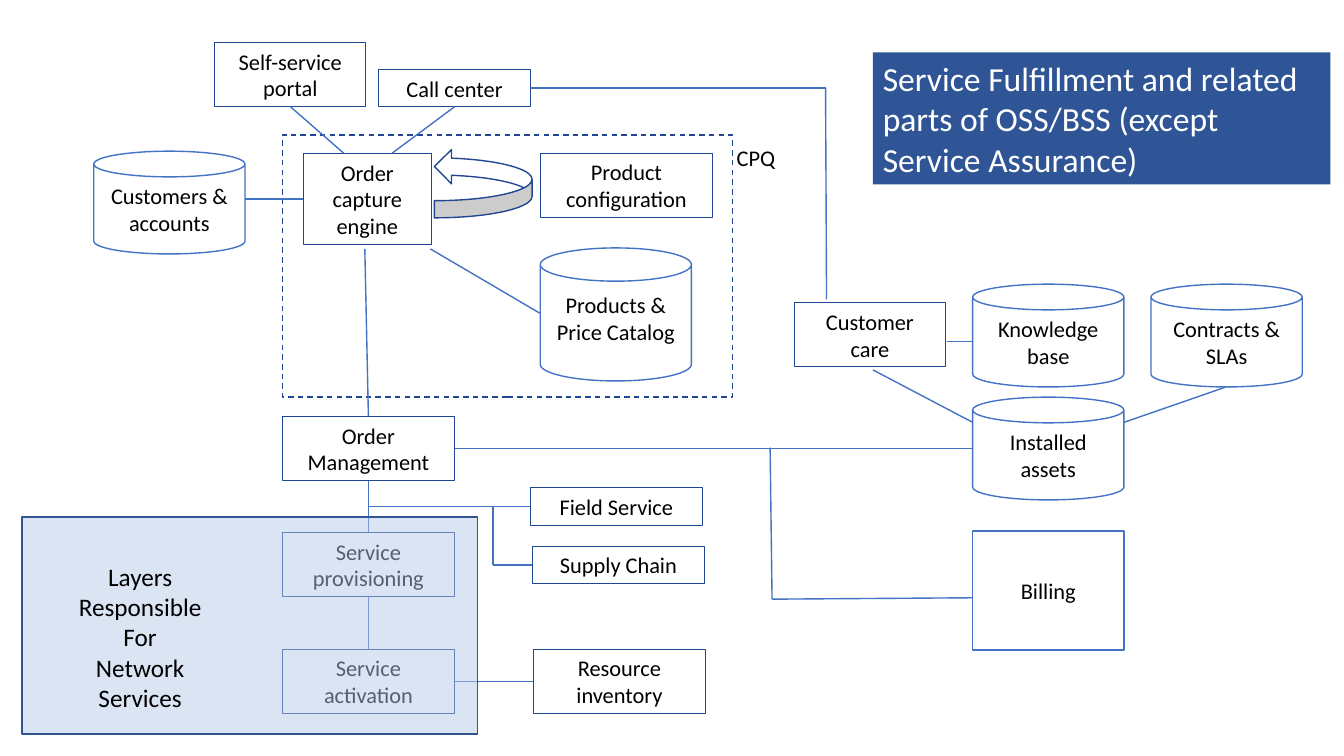
import dataclasses

import lxml.etree
import pptx
import pptx.dml.color
import pptx.enum.dml
import pptx.enum.shapes
import pptx.enum.text
import pptx.oxml.ns
import pptx.util

Pt = pptx.util.Pt
qn = pptx.oxml.ns.qn
Kind = pptx.enum.shapes.MSO_SHAPE
Align = pptx.enum.text.PP_ALIGN
TOP, LEFT, BOTTOM, RIGHT = range(4)


@dataclasses.dataclass(frozen=True)
class Theme:
    font: str = "Calibri"
    body: float = 16
    note: float = 18
    head: float = 24
    ink: str = "000000"
    white: str = "FFFFFF"
    navy: str = "214794"
    blue: str = "4472C4"
    title: str = "2F5597"
    pale: str = "B4C7E7"
    rim: str = "325491"


class Board:
    def __init__(self, slide, theme):
        self.slide = slide
        self.theme = theme

    def tint(self, code):
        return pptx.dml.color.RGBColor.from_string(code)

    def words(self, shape, text, size=None, color=None, align=Align.CENTER):
        frame = shape.text_frame
        frame.word_wrap = True
        for i, part in enumerate(text.split("\n")):
            para = frame.paragraphs[0] if i == 0 else frame.add_paragraph()
            para.alignment = align
            run = para.add_run()
            run.text = part
            run.font.name = self.theme.font
            run.font.size = Pt(size or self.theme.body)
            run.font.color.rgb = self.tint(color or self.theme.ink)

    def shape(self, kind, spot, fill=None, line=None, width=1):
        shape = self.slide.shapes.add_shape(kind, *map(Pt, spot))
        shape.shadow.inherit = False
        if fill:
            shape.fill.solid()
            shape.fill.fore_color.rgb = self.tint(fill)
        else:
            shape.fill.background()
        if line:
            shape.line.color.rgb = self.tint(line)
            shape.line.width = Pt(width)
        else:
            shape.line.fill.background()
        return shape

    def box(self, text, x, y, w, h, line=None, width=0.75):
        shape = self.shape(Kind.RECTANGLE, (x, y, w, h), None, line or self.theme.navy, width)
        self.words(shape, text)
        return shape

    def store(self, text, x, y, h=73.4, low=3.6):
        shape = self.shape(Kind.CAN, (x, y, 108, h), None, self.theme.blue)
        self.words(shape, text)
        shape.text_frame.margin_bottom = Pt(low)
        return shape

    def label(self, text, spot, size=None, align=Align.CENTER):
        self.words(self.slide.shapes.add_textbox(*map(Pt, spot)), text, size, None, align)

    def frame(self, spot):
        shape = self.shape(Kind.RECTANGLE, spot, None, self.theme.navy)
        shape.line.dash_style = pptx.enum.dml.MSO_LINE.DASH

    def loop(self, spot):
        shape = self.shape(Kind.CURVED_LEFT_ARROW, spot, self.theme.white, self.theme.navy)
        shape._element.spPr.find(qn("a:xfrm")).set("flipV", "1")

    def band(self, spot, alpha):
        shape = self.shape(Kind.RECTANGLE, spot, self.theme.pale, self.theme.rim)
        color = shape._element.spPr.find(qn("a:solidFill")).find(qn("a:srgbClr"))
        lxml.etree.SubElement(color, qn("a:alpha")).set("val", str(alpha * 1000))

    def title(self, text, spot):
        shape = self.shape(Kind.RECTANGLE, spot, self.theme.title)
        self.words(shape, text, self.theme.head, self.theme.white, Align.LEFT)

    def link(self, start, end):
        straight = pptx.enum.shapes.MSO_CONNECTOR.STRAIGHT
        spots = [(0, 0) if hasattr(p[0], "shape_id") else p for p in (start, end)]
        wire = self.slide.shapes.add_connector(straight, *(Pt(v) for p in spots for v in p))
        for point, join in ((start, wire.begin_connect), (end, wire.end_connect)):
            if hasattr(point[0], "shape_id"):
                join(*point)
        wire.line.color.rgb = self.tint(self.theme.blue)
        wire.line.width = Pt(1)
        lxml.etree.SubElement(wire._element.spPr, qn("a:effectLst"))


def main():
    deck = pptx.Presentation()
    deck.slide_width, deck.slide_height = Pt(960), Pt(540)
    theme = Theme()
    board = Board(deck.slides.add_slide(deck.slide_layouts[6]), theme)

    wide, tall, slim = 123.1, 46, 26.6
    portal = board.box("Self-service portal", 153.4, 30.2, 108, tall)
    call = board.box("Call center", 270.7, 49.7, 108, slim)
    engine = board.box("Order capture engine", 216.7, 109.4, 91.4, 65.5)
    board.box("Product configuration", 385.9, 109.4, wide, tall)
    orders = board.box("Order Management", 201.6, 297.4, wide, tall)
    setup = board.box("Service provisioning", 201.6, 380.2, wide, tall)
    launch = board.box("Service activation", 201.6, 463.7, wide, tall)
    supply = board.box("Supply Chain", 380.2, 390.2, wide, slim)
    field = board.box("Field Service", 378.7, 348.5, wide, slim)
    stock = board.box("Resource inventory", 380.9, 463.7, wide, tall)
    board.box("Customer care", 567.4, 216, 108, tall)
    board.box("Billing", 694.8, 379.4, 108, 85, theme.blue, 1)

    board.store("Customers & accounts", 67, 108)
    board.store("Products & Price Catalog", 385.9, 177.1, 95, 10.6)
    board.store("Knowledge\nbase", 694.8, 203)
    board.store("Contracts & SLAs", 822.2, 203)
    board.store("Installed assets", 694.8, 283.7)

    board.loop((310.3, 106.6, 69.8, 49))
    board.frame((201.6, 96.5, 321.8, 187.2))
    board.label("CPQ", (519.1, 99.4, 92.2, slim), align=Align.LEFT)

    for start, end in (
        ((portal, BOTTOM), (245.5, 109.4)),
        ((call, BOTTOM), (280.1, 109.4)),
        ((call, RIGHT), (589.7, 63)),
        ((589.7, 63), (590.4, 213.8)),
        ((175, 142.15), (engine, LEFT)),
        ((385.9, 223.9), (307.4, 177.8)),
        ((260.6, 177.8), (orders, TOP)),
        ((orders, RIGHT), (694.8, 320.4)),
        ((orders, BOTTOM), (setup, TOP)),
        ((setup, BOTTOM), (launch, TOP)),
        ((launch, RIGHT), (stock, LEFT)),
        ((262.8, 361.8), (field, LEFT)),
        ((352.1, 361.8), (352.1, 403.5)),
        ((352.1, 403.5), (supply, LEFT)),
        ((550.1, 319.7), (551.5, 428)),
        ((551.5, 428), (694.8, 427)),
        ((676.1, 244.1), (694.8, 244.1)),
        ((694.8, 301.7), (623.5, 264.2)),
        ((802.8, 301.7), (875.5, 276.5)),
    ):
        board.link(start, end)

    board.title(
        "Service Fulfillment and related parts of OSS/BSS (except Service Assurance)",
        (623.5, 37.4, 326.9, 94.3),
    )
    board.band((15.8, 369.4, 325.4, 154.8), 48)
    board.label(
        "Layers\nResponsible\nFor\nNetwork\nServices", (34.6, 397.4, 131, 116.6), theme.note
    )
    deck.save("out.pptx")


if __name__ == "__main__":
    main()
